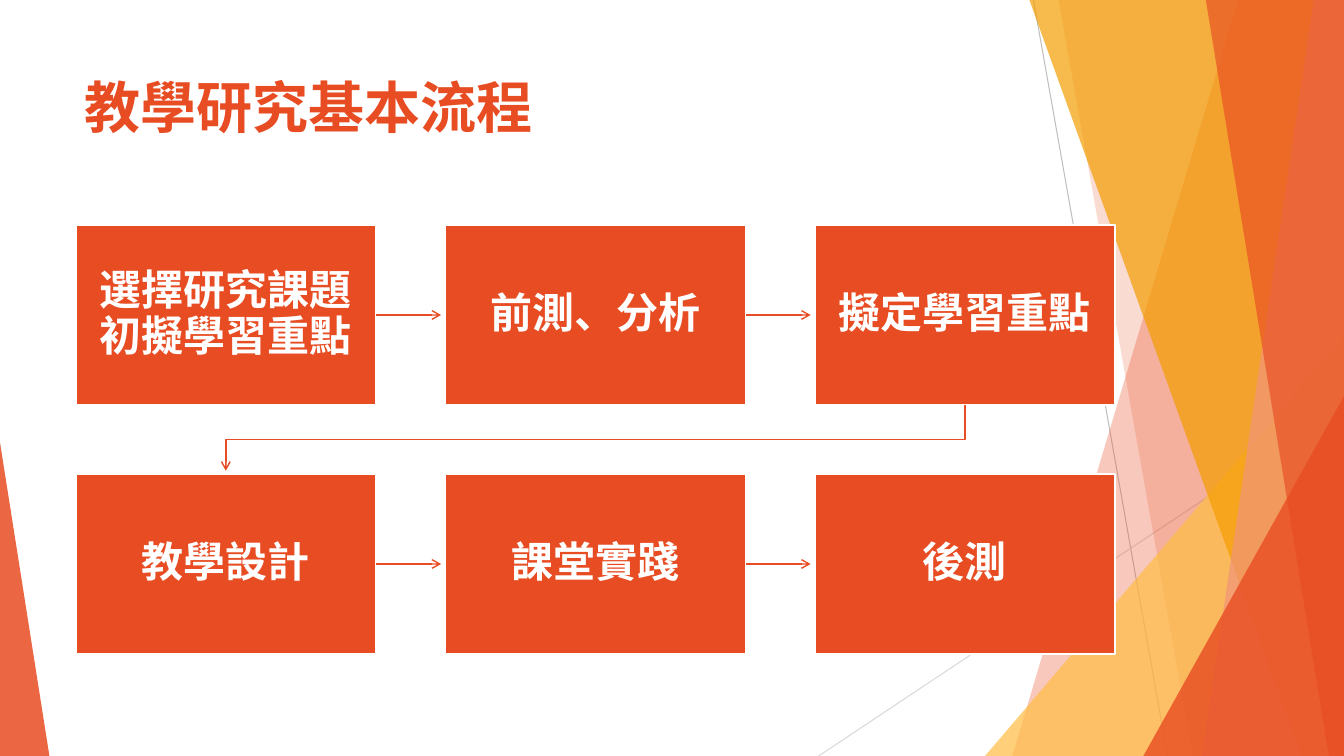
"""Build a slide showing the basic flow of teaching research."""
from lxml import etree
from pptx import Presentation
from pptx.dml.color import RGBColor
from pptx.enum.shapes import MSO_CONNECTOR, MSO_SHAPE
from pptx.enum.text import MSO_ANCHOR, PP_ALIGN
from pptx.oxml.ns import qn
from pptx.util import Inches, Pt

LINE = MSO_CONNECTOR.STRAIGHT
RECT = MSO_SHAPE.RECTANGLE
PEAK = MSO_SHAPE.ISOSCELES_TRIANGLE
LEFT, MID = PP_ALIGN.LEFT, PP_ALIGN.CENTER
TOP, CORE = MSO_ANCHOR.TOP, MSO_ANCHOR.MIDDLE
FONT = "Noto Sans CJK SC"
HUES = {"red": "E84C22", "gold": "FFBD47", "amber": "F49D00", "pink": "F1947A",
        "gray": "BFBFBF", "pale": "D9D9D9", "white": "FFFFFF"}
WIDE, HIGH = 13.33, 7.5


def write(shape, text, size, hue, align=LEFT, anchor=TOP, pad=0.1, space=1.0):
    frame = shape.text_frame
    frame.word_wrap = True
    frame.vertical_anchor = anchor
    frame.margin_left = frame.margin_right = Inches(pad)
    frame.margin_top = frame.margin_bottom = Inches(pad / 2)
    para = frame.paragraphs[0]
    para.text = text
    para.alignment = align
    para.line_spacing = space
    for run in para.runs:
        run.font.size = Pt(size)
        run.font.bold = True
        run.font.name = FONT
        run.font.color.rgb = RGBColor.from_string(HUES[hue])
        etree.SubElement(run.font._element, qn("a:ea"), typeface=FONT)


def stroke(shape, hue, width, arrow=False):
    shape.line.color.rgb = RGBColor.from_string(HUES[hue])
    shape.line.width = Pt(width)
    if arrow:
        etree.SubElement(shape.line._get_or_add_ln(), qn("a:tailEnd"), type="arrow")
    props = shape._element.spPr
    if props.find(qn("a:effectLst")) is None:
        etree.SubElement(props, qn("a:effectLst"))


deck = Presentation()
deck.slide_width, deck.slide_height = Inches(WIDE), Inches(HIGH)
slide = deck.slides.add_slide(deck.slide_layouts[6])
shapes = slide.shapes

for hue, ends in [("gray", (10.25, 0, 11.58, HIGH)), ("pale", (WIDE, 4.03, 8.12, HIGH))]:
    stroke(shapes.add_connector(LINE, *map(Inches, ends)), hue, 0.75)

bands = [
    ("red", 30, (12.28, 10.04), None),
    ("red", 20, (10.5, 11.83), None),
    ("gold", 72, (9.77, 3.33, 3.56, 4.17), 1),
    ("amber", 70, (10.21, 12.91), None),
    ("pink", 70, (13.03, 11.92), None),
    ("red", 65, (11.96, 13.18), None),
    ("red", 80, (11.34, 3.93, 1.99, 3.57), 1),
    ("red", 85, (0, 4.39, 0.49, 3.11), 0),
]
for hue, alpha, size, tip in bands:
    if tip is None:
        head, foot = size
        path = shapes.build_freeform(Inches(head), 0, scale=1.0)
        path.add_line_segments([(Inches(x), Inches(y)) for x, y in
                                [(WIDE, 0), (WIDE, HIGH), (foot, HIGH)]])
        band = path.convert_to_shape()
    else:
        band = shapes.add_shape(PEAK, *map(Inches, size))
        band.adjustments[0] = tip
    band.shadow.inherit = False
    band.fill.solid()
    band.fill.fore_color.rgb = RGBColor.from_string(HUES[hue])
    tint = band._element.spPr.find(qn("a:solidFill"))[0]
    etree.SubElement(tint, qn("a:alpha"), val=str(alpha * 1000))
    band.line.fill.background()

title = shapes.add_textbox(Inches(0.74), Inches(0.67), Inches(9.4), Inches(0.93))
write(title, "教學研究基本流程", 40, "red")

steps = [["選擇研究課題\n初擬學習重點", "前測、分析", "擬定學習重點"],
         ["教學設計", "課堂實踐", "後測"]]
wide, high = 2.98, 1.79
for row, names in enumerate(steps):
    last = None
    for col, name in enumerate(names):
        x, y = 0.75 + 3.665 * col, 2.23 + 2.47 * row
        box = shapes.add_shape(RECT, *map(Inches, (x, y, wide, high)))
        box.fill.solid()
        box.fill.fore_color.rgb = RGBColor.from_string(HUES["red"])
        stroke(box, "white", 1.5)
        write(box, name, 30, "white", align=MID, anchor=CORE, pad=0.2, space=0.9)
        if last:
            mid = y + high / 2
            link = shapes.add_connector(LINE, *map(Inches, (x - 0.69, mid, x - 0.04, mid)))
            link.begin_connect(last, 3)
            stroke(link, "red", 1, arrow=True)
        last = box

path = shapes.build_freeform(Inches(9.57), Inches(4.02), scale=1.0)
path.add_line_segments([(Inches(x), Inches(y)) for x, y in
                        [(9.57, 4.36), (2.24, 4.36), (2.24, 4.67)]], close=False)
turn = path.convert_to_shape()
turn.fill.background()
stroke(turn, "red", 1, arrow=True)

deck.save("out.pptx")
